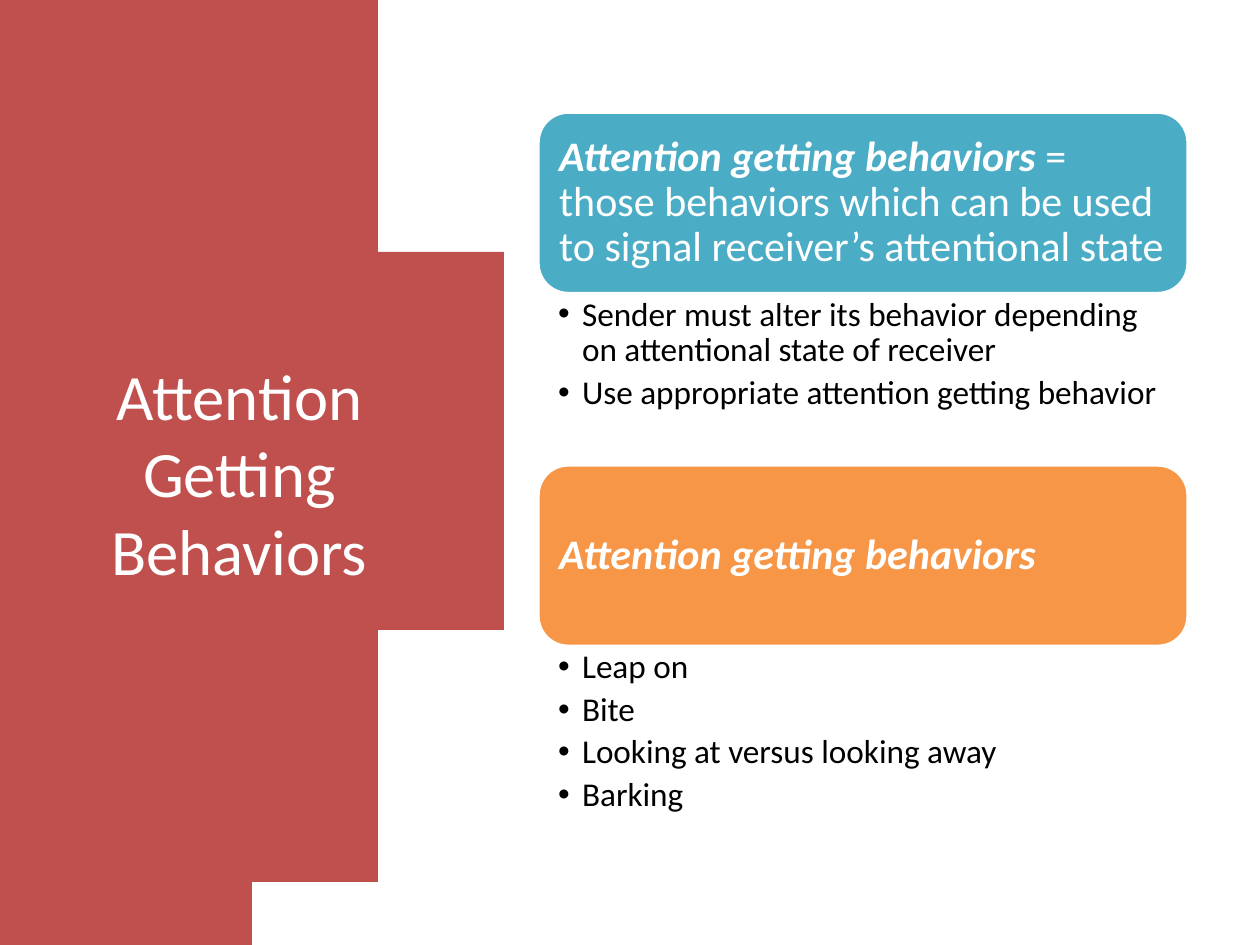
from lxml.etree import SubElement
from pptx import Presentation
from pptx.dml.color import RGBColor
from pptx.enum.shapes import MSO_SHAPE as Shape
from pptx.enum.text import MSO_ANCHOR as Anchor, PP_ALIGN as Align
from pptx.oxml.ns import qn
from pptx.util import Inches, Pt

WHITE = RGBColor(0xFF, 0xFF, 0xFF)
BLACK = RGBColor(0x00, 0x00, 0x00)
RED = RGBColor(0xC0, 0x50, 0x4D)
TEAL = RGBColor(0x4B, 0xAC, 0xC6)
ORANGE = RGBColor(0xF7, 0x96, 0x46)

TOP, LEFT, WIDTH = 0.89, 4.27, 5.16
HEADER_HEIGHT, SECTION_STEP = 1.44, 2.8
LIST_HEIGHT = SECTION_STEP - HEADER_HEIGHT
CURVE_STEPS = 40

SECTIONS = [
    (TEAL, [("Attention getting behaviors ", True),
            ("= those behaviors which can be used to signal receiver’s attentional state", False)],
     ["Sender must alter its behavior depending on attentional state of receiver",
      "Use appropriate attention getting behavior"]),
    (ORANGE, [("Attention getting behaviors", True)],
     ["Leap on", "Bite", "Looking at versus looking away", "Barking"]),
]


def add_run(paragraph, text, size, color, emphasis=False):
    run = paragraph.add_run()
    run.text = text
    run.font.name = "Calibri"
    run.font.size = Pt(size)
    run.font.color.rgb = color
    run.font.bold = run.font.italic = emphasis


def set_frame(frame, anchor, left, top, right, bottom):
    frame.word_wrap = True
    frame.vertical_anchor = anchor
    frame.margin_left, frame.margin_top = Inches(left), Inches(top)
    frame.margin_right, frame.margin_bottom = Inches(right), Inches(bottom)


presentation = Presentation()
presentation.slide_width = Inches(10)
presentation.slide_height = Inches(7.5)
slide = presentation.slides.add_slide(presentation.slide_layouts[5])
shapes = slide.shapes

upper_arc = []
for step in range(CURVE_STEPS + 1):
    t = step / CURVE_STEPS
    weights = ((1 - t) ** 3, 3 * t * (1 - t) ** 2, 3 * t ** 2 * (1 - t), t ** 3)
    x = sum(w * v for w, v in zip(weights, (2.12, 3.07, 3.7, 3.7)))
    y = sum(w * v for w, v in zip(weights, (0, 0.77, 2.16, 3.75)))
    upper_arc.append((x, y))
lower_arc = [(x, 7.5 - y) for x, y in reversed(upper_arc[:-1])]
builder = shapes.build_freeform(0, 0, scale=Inches(1))
builder.add_line_segments(upper_arc + lower_arc + [(0, 7.5)], close=True)
panel = builder.convert_to_shape()
panel.shadow.inherit = False
panel.fill.solid()
panel.fill.fore_color.rgb = RED
panel.line.fill.background()

title = shapes.title
title.left, title.top = Inches(0.69), Inches(0.7)
title.width, title.height = Inches(2.42), Inches(6.09)
set_frame(title.text_frame, Anchor.MIDDLE, 0.1, 0.05, 0.1, 0.05)
paragraph = title.text_frame.paragraphs[0]
paragraph.alignment = Align.CENTER
add_run(paragraph, "Attention Getting Behaviors", 37, WHITE)
panel._element.addnext(title._element)

for index, (color, heading, bullets) in enumerate(SECTIONS):
    top = TOP + index * SECTION_STEP
    header = shapes.add_shape(Shape.ROUNDED_RECTANGLE, Inches(LEFT), Inches(top),
                              Inches(WIDTH), Inches(HEADER_HEIGHT))
    header.shadow.inherit = False
    header.fill.solid()
    header.fill.fore_color.rgb = color
    header.line.color.rgb = WHITE
    header.line.width = Pt(2)
    set_frame(header.text_frame, Anchor.MIDDLE, 0.1, 0.1, 0.1, 0.1)
    paragraph = header.text_frame.paragraphs[0]
    paragraph.alignment = Align.LEFT
    paragraph.line_spacing = 0.9
    for text, emphasis in heading:
        add_run(paragraph, text, 24, WHITE, emphasis)

    body = shapes.add_textbox(Inches(LEFT), Inches(top + HEADER_HEIGHT),
                              Inches(WIDTH), Inches(LIST_HEIGHT))
    frame = body.text_frame
    set_frame(frame, Anchor.TOP, 0.16, 0.03, 0.19, 0.03)
    for number, text in enumerate(bullets):
        paragraph = frame.add_paragraph() if number else frame.paragraphs[0]
        paragraph.level = 1
        paragraph.line_spacing = 0.9
        paragraph.space_after = Pt(3.8)
        properties = paragraph._p.get_or_add_pPr()
        properties.set("marL", str(Inches(0.19)))
        properties.set("indent", str(Inches(-0.19)))
        SubElement(properties, qn("a:buFont"), typeface="Arial")
        SubElement(properties, qn("a:buChar"), char="•")
        add_run(paragraph, text, 19, BLACK)

presentation.save("out.pptx")
